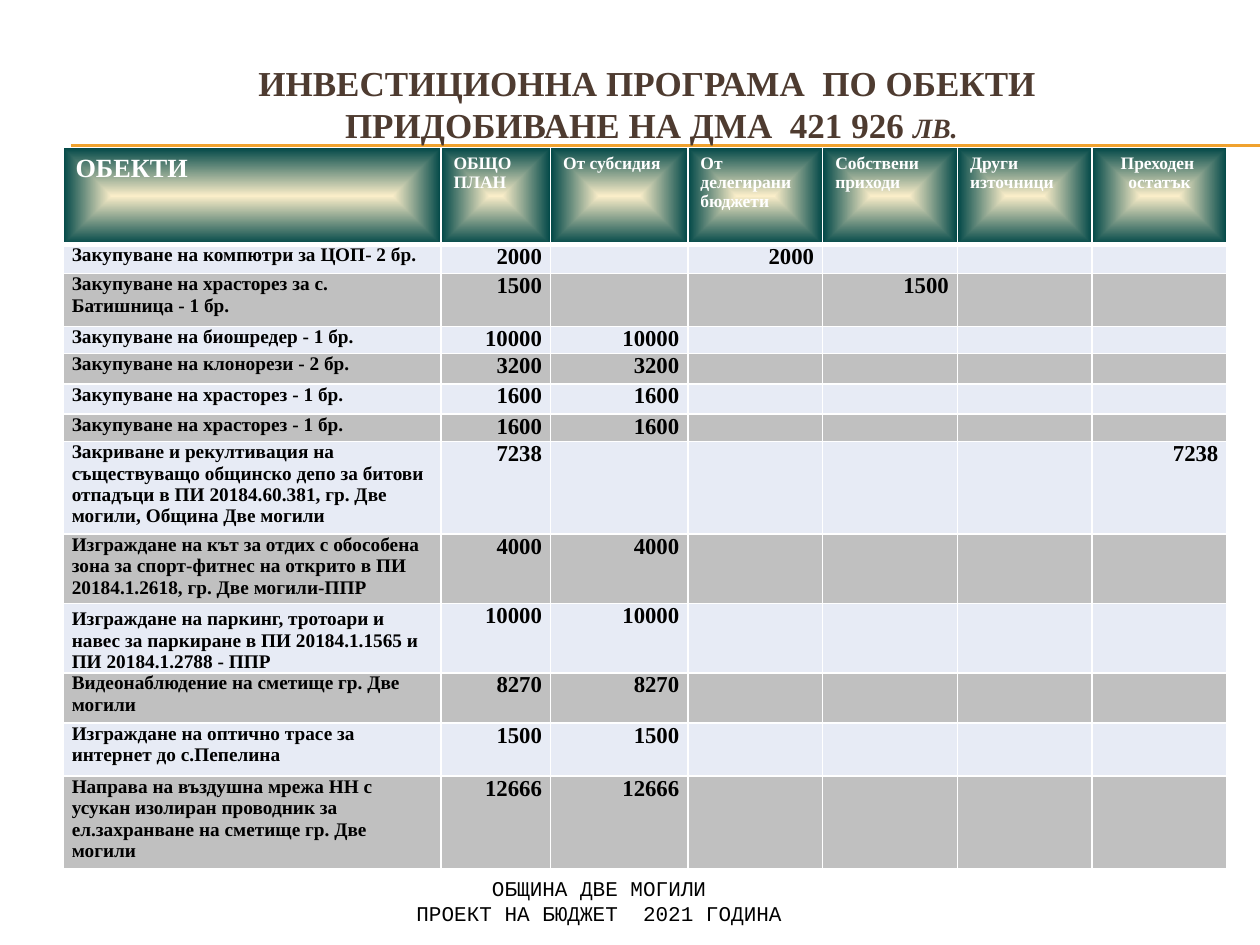
from dataclasses import dataclass

from lxml.etree import SubElement
from pptx import Presentation
from pptx.dml.color import RGBColor
from pptx.enum.shapes import MSO_CONNECTOR as Connector
from pptx.enum.text import MSO_ANCHOR as Anchor, PP_ALIGN as Align
from pptx.oxml import parse_xml
from pptx.oxml.ns import nsdecls, qn
from pptx.util import Inches, Pt


@dataclass(frozen=True)
class Theme:
    """Colours, fonts and type sizes of the slide."""
    title: str = "4E3B30"
    rule: str = "F0A22E"
    text: str = "000000"
    white: str = "FFFFFF"
    header_center: str = "FBEEC9"
    header_edge: str = "004747"
    bands: tuple = ("E7EBF5", "C0C0C0")
    serif: str = "Times New Roman"
    mono: str = "Courier New"
    title_size: int = 20
    unit_size: int = 16
    lead_size: int = 15
    header_size: int = 10
    label_size: int = 11
    value_size: int = 13
    footer_size: int = 12


THEME = Theme()
HEADERS = ["ОБЕКТИ", "ОБЩО ПЛАН", "От субсидия", "От делегирани бюджети",
           "Собствени приходи", "Други източници", "Преходен  остатък"]
COLUMN_WIDTHS = [3, 0.87, 1.09] + [1.07] * 4
HEADER_HEIGHT = 0.77
SUBSIDY, DELEGATED, OWN, CARRIED = 2, 3, 4, 6
PROJECTS = [
    ("Закупуване на компютри за ЦОП- 2 бр.", 2000, DELEGATED, 0.23),
    ("Закупуване на храсторез за с. Батишница - 1 бр.", 1500, OWN, 0.42),
    ("Закупуване на биошредер - 1 бр.", 10000, SUBSIDY, 0.2),
    ("Закупуване на клонорези - 2 бр.", 3200, SUBSIDY, 0.24),
    ("Закупуване на храсторез - 1 бр.", 1600, SUBSIDY, 0.24),
    ("Закупуване на храсторез - 1 бр.", 1600, SUBSIDY, 0.2),
    ("Закриване и рекултивация на съществуващо общинско депо за битови отпадъци "
     "в ПИ 20184.60.381, гр. Две могили, Община Две могили", 7238, CARRIED, 0.5),
    ("Изграждане на кът за отдих с обособена зона за спорт-фитнес на открито "
     "в ПИ  20184.1.2618, гр. Две могили-ППР", 4000, SUBSIDY, 0.5),
    ("Изграждане на паркинг, тротоари и навес за паркиране в ПИ 20184.1.1565 и "
     "ПИ 20184.1.2788 - ППР", 10000, SUBSIDY, 0.5),
    ("Видеонаблюдение на сметище гр. Две могили", 8270, SUBSIDY, 0.4),
    ("Изграждане на оптично трасе за интернет до с.Пепелина", 1500, SUBSIDY, 0.42),
    ("Направа на въздушна мрежа НН с усукан изолиран проводник за ел.захранване "
     "на сметище гр. Две могили", 12666, SUBSIDY, 0.5),
]


def write(paragraph, text, *, size, color=THEME.text, font=THEME.serif,
          bold=True, italic=False, align=Align.LEFT):
    """Append formatted text to a paragraph."""
    paragraph.alignment = align
    run = paragraph.add_run()
    run.text = text
    run.font.name = font
    run.font.size = Pt(size)
    run.font.bold = bold
    run.font.italic = italic
    run.font.color.rgb = RGBColor.from_string(color)


def set_frame(frame, margins, anchor):
    """Set wrapping, margins and vertical anchor of a text frame."""
    frame.word_wrap = True
    frame.vertical_anchor = anchor
    (frame.margin_left, frame.margin_top,
     frame.margin_right, frame.margin_bottom) = map(Inches, margins)


def add_rules(slide, left, top, width, gap):
    """Draw the double rule under the title."""
    for y in (top, top + gap):
        line = slide.shapes.add_connector(
            Connector.STRAIGHT, Inches(left), Inches(y), Inches(left + width), Inches(y))
        line.line.color.rgb = RGBColor.from_string(THEME.rule)
        line.line.width = Pt(0.75)
        SubElement(line.element.spPr, qn("a:effectLst"))


def add_title(slide, left, top, width, height):
    """Place and format the title placeholder above the rules."""
    title = slide.shapes.title
    title.element.getparent().append(title.element)
    title.left, title.top, title.width, title.height = map(Inches, (left, top, width, height))
    set_frame(title.text_frame, (0, 0.05, 0, 0), Anchor.MIDDLE)
    paragraph = title.text_frame.paragraphs[0]
    paragraph.line_spacing = 1.0
    style = dict(color=THEME.title, align=Align.CENTER)
    write(paragraph, "ИНВЕСТИЦИОННА ПРОГРАМА  ПО ОБЕКТИ ", size=THEME.title_size, **style)
    paragraph.add_line_break()
    write(paragraph, "ПРИДОБИВАНЕ НА ДМА  421 926 ", size=THEME.title_size, **style)
    write(paragraph, "ЛВ.", size=THEME.unit_size, italic=True, **style)


def add_footer(slide, left, top, width, height):
    """Add the two centred footer lines."""
    box = slide.shapes.add_textbox(*map(Inches, (left, top, width, height)))
    frame = box.text_frame
    set_frame(frame, (0, 0, 0, 0), Anchor.BOTTOM)
    lines = ["ОБЩИНА ДВЕ МОГИЛИ", "ПРОЕКТ НА БЮДЖЕТ  2021 ГОДИНА"]
    for index, text in enumerate(lines):
        paragraph = frame.add_paragraph() if index else frame.paragraphs[0]
        write(paragraph, text, size=THEME.footer_size, font=THEME.mono,
              bold=False, align=Align.CENTER)


def set_borders(cell, top=1, bottom=1):
    """Give a cell white borders, with widths in points."""
    properties = cell._tc.get_or_add_tcPr()
    for index, (side, width) in enumerate(dict(L=1, R=1, T=top, B=bottom).items()):
        properties.insert(index, parse_xml(
            f'<a:ln{side} {nsdecls("a")} w="{Pt(width)}"><a:solidFill>'
            f'<a:srgbClr val="{THEME.white}"/></a:solidFill></a:ln{side}>'))


def fill_header(cell):
    """Fill a header cell with a gradient spreading from its centre."""
    cell._tc.get_or_add_tcPr().append(parse_xml(
        f'<a:gradFill {nsdecls("a")}><a:gsLst>'
        f'<a:gs pos="0"><a:srgbClr val="{THEME.header_center}"/></a:gs>'
        f'<a:gs pos="100000"><a:srgbClr val="{THEME.header_edge}"/></a:gs></a:gsLst>'
        '<a:path path="shape"><a:fillToRect l="50000" t="50000" r="50000" b="50000"/>'
        '</a:path></a:gradFill>'))


def add_header_row(table):
    """Write the column headings."""
    for column, heading in enumerate(HEADERS):
        cell = table.cell(0, column)
        set_borders(cell, bottom=3)
        fill_header(cell)
        last = column == len(HEADERS) - 1
        write(cell.text_frame.paragraphs[0], heading, color=THEME.white,
              size=THEME.header_size if column else THEME.lead_size,
              align=Align.CENTER if last else Align.LEFT)


def add_project_row(table, row, label, amount, source):
    """Write one project with its total and its funding source."""
    for column in range(len(HEADERS)):
        cell = table.cell(row, column)
        set_borders(cell, top=3 if row == 1 else 1)
        cell.fill.solid()
        cell.fill.fore_color.rgb = RGBColor.from_string(THEME.bands[(row - 1) % 2])
        cell.margin_left = cell.margin_right = Inches(0.07)
        cell.margin_top = cell.margin_bottom = 0
        paragraph = cell.text_frame.paragraphs[0]
        if column == 0:
            write(paragraph, label, size=THEME.label_size)
        elif column in (1, source):
            write(paragraph, str(amount), size=THEME.value_size, align=Align.RIGHT)
        else:
            SubElement(paragraph._p, qn("a:endParaRPr"), sz=str(THEME.label_size * 100))


def add_projects_table(slide, left, top, width, height):
    """Build the table of projects and funding sources."""
    shape = slide.shapes.add_table(len(PROJECTS) + 1, len(HEADERS),
                                   *map(Inches, (left, top, width, height)))
    table = shape.table
    for column, column_width in zip(table.columns, COLUMN_WIDTHS):
        column.width = Inches(column_width)
    table.rows[0].height = Inches(HEADER_HEIGHT)
    add_header_row(table)
    for row, (label, amount, source, row_height) in enumerate(PROJECTS, 1):
        table.rows[row].height = Inches(row_height)
        add_project_row(table, row, label, amount, source)
    table.cell(9, 0).vertical_anchor = Anchor.BOTTOM


def main():
    """Build and save the presentation."""
    presentation = Presentation()
    presentation.slide_width, presentation.slide_height = Inches(10), Inches(7.5)
    slide = presentation.slides.add_slide(presentation.slide_layouts[5])
    add_rules(slide, 0.56, 1.15, 9.44, 0.01)
    add_title(slide, 1.17, 0.42, 8, 0.75)
    add_footer(slide, 2.92, 6.95, 3.67, 0.4)
    add_projects_table(slide, 0.5, 1.17, 9.25, 5.72)
    presentation.save("out.pptx")


if __name__ == "__main__":
    main()
